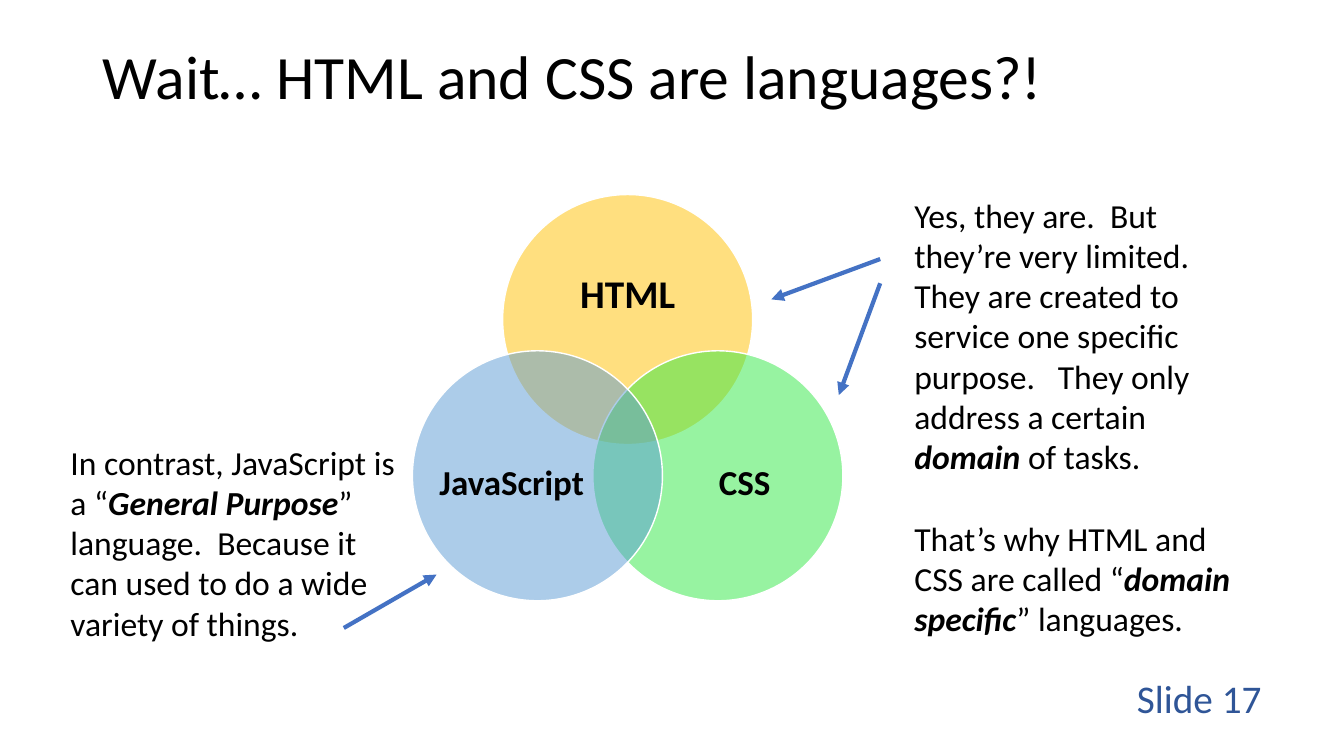
from collections import namedtuple
from dataclasses import dataclass

from lxml import etree
from pptx import Presentation
from pptx import util as u
from pptx.dml.color import RGBColor
from pptx.enum import shapes, text
from pptx.oxml import ns

Box = namedtuple("Box", "left top width height")


@dataclass(frozen=True)
class Theme:
    """Colours, font and type sizes of the slide."""
    font: str = "Calibri"
    ink: str = "000000"
    paper: str = "FFFFFF"
    html: str = "FFC000"
    css: str = "30E845"
    javascript: str = "5B9BD5"
    arrow: str = "4472C4"
    number: str = "2F5597"
    title_size: int = 44
    html_size: int = 28
    label_size: int = 25
    note_size: int = 24
    number_size: int = 28


THEME = Theme()


def place(item, box):
    """Move an item to a box given in inches."""
    item.left, item.top, item.width, item.height = map(u.Inches, box)


def style(span, size, color=THEME.ink, bold=False, italic=False):
    """Format one run of text."""
    font = span.font
    font.name, font.size = THEME.font, u.Pt(size)
    font.bold, font.italic = bold, italic
    font.color.rgb = RGBColor.from_string(color)


def add_line_of_text(page, box, words, size, align, color=THEME.ink, bold=False, inset=0.0):
    """Add a one-line text box, centred vertically."""
    frame = page.shapes.add_textbox(*map(u.Inches, box)).text_frame
    frame.word_wrap = True
    frame.vertical_anchor = text.MSO_ANCHOR.MIDDLE
    frame.margin_left = frame.margin_right = u.Inches(inset)
    frame.margin_top = frame.margin_bottom = u.Inches(inset / 2)
    para = frame.paragraphs[0]
    para.text, para.alignment = words, align
    style(para.runs[0], size, color, bold)
    return para


def add_title(page, box, words):
    """Fill and place the title placeholder."""
    title = page.shapes.title
    place(title, box)
    frame = title.text_frame
    frame.text = words
    frame.word_wrap = True
    frame.auto_size = text.MSO_AUTO_SIZE.NONE
    frame.vertical_anchor = text.MSO_ANCHOR.MIDDLE
    para = frame.paragraphs[0]
    para.alignment, para.line_spacing = text.PP_ALIGN.LEFT, 0.9
    style(para.runs[0], THEME.title_size)


def add_circle(page, box, color):
    """Add a half-transparent circle with a white outline."""
    circle = page.shapes.add_shape(shapes.MSO_SHAPE.OVAL, *map(u.Inches, box))
    circle.shadow.inherit = False
    circle.fill.solid()
    circle.fill.fore_color.rgb = RGBColor.from_string(color)
    tint = circle.fill._xPr.find(".//" + ns.qn("a:srgbClr"))
    etree.SubElement(tint, ns.qn("a:alpha"), val="50000")
    circle.line.color.rgb = RGBColor.from_string(THEME.paper)
    circle.line.width = u.Pt(1)


def add_venn(page, box):
    """Draw three overlapping circles, one above two, with their labels."""
    size = 2.48
    across, down = box.width - size, box.height - size
    wide, narrow = (1.82, 1.12), (1.49, 1.36)
    sets = [
        ("HTML", THEME.html, THEME.html_size, across / 2, 0, 0.33, 0.44, wide),
        ("CSS", THEME.css, THEME.label_size, across, down, 0.76, 0.64, narrow),
        ("JavaScript", THEME.javascript, THEME.label_size, 0, down, 0.24, 0.64, narrow),
    ]
    for name, color, points, dx, dy, label_x, label_y, label_size in sets:
        left, top = box.left + dx, box.top + dy
        add_circle(page, Box(left, top, size, size), color)
        label = Box(left + label_x, top + label_y, *label_size)
        para = add_line_of_text(page, label, name, points, text.PP_ALIGN.CENTER, bold=True)
        para.line_spacing = 0.9


def add_note(page, box, paragraphs):
    """Add a note whose paragraphs are lists of (words, emphasis) pairs."""
    frame = page.shapes.add_textbox(*map(u.Inches, box)).text_frame
    frame.word_wrap = True
    frame.auto_size = text.MSO_AUTO_SIZE.SHAPE_TO_FIT_TEXT
    for index, spans in enumerate(paragraphs):
        para = frame.add_paragraph() if index else frame.paragraphs[0]
        para.space_before = u.Pt(29.3 if index else 0)
        for words, emphasis in spans:
            span = para.add_run()
            span.text = words
            style(span, THEME.note_size, bold=emphasis, italic=emphasis)


def add_arrow(page, start, end):
    """Add an arrow from start to end."""
    arrow = page.shapes.add_connector(
        shapes.MSO_CONNECTOR.STRAIGHT, *map(u.Inches, start + end))
    arrow.line.color.rgb = RGBColor.from_string(THEME.arrow)
    arrow.line.width = u.Pt(3)
    etree.SubElement(arrow.line._get_or_add_ln(), ns.qn("a:tailEnd"), type="triangle")
    etree.SubElement(arrow._element.spPr, ns.qn("a:effectLst"))


def add_arrows(page, box):
    """Point from the notes to the circles inside the box."""
    routes = [
        ((4.64, 0.88), (4.23, 1.99)),
        ((-0.68, 4.3), (0.24, 3.77)),
        ((4.64, 0.64), (3.56, 1.04)),
    ]
    for route in routes:
        start, end = ((box.left + x, box.top + y) for x, y in route)
        add_arrow(page, start, end)


def build_languages_slide(deck):
    """Build the slide on HTML, CSS and JavaScript as languages."""
    page = deck.slides.add_slide(deck.slide_layouts[5])
    venn = Box(4.09, 1.93, 4.27, 4.03)
    add_title(page, Box(0.92, 0.4, 11.5, 0.78), "Wait… HTML and CSS are languages?!")
    add_venn(page, venn)
    add_line_of_text(page, Box(9.61, 6.72, 3, 0.4), "Slide 17", THEME.number_size,
                     text.PP_ALIGN.RIGHT, THEME.number, inset=0.1)
    add_note(page, Box(8.97, 1.88, 3.48, 4.54), [
        [("Yes, they are.  But they’re very limited.  They are created to service "
          "one specific purpose.   They only address a certain ", False),
         ("domain", True), (" of tasks.", False)],
        [("That’s why HTML and CSS are called “", False),
         ("domain specific", True), ("” languages.", False)],
    ])
    add_note(page, Box(0.6, 4.33, 3.44, 2.12), [
        [("In contrast, JavaScript is a “", False), ("General Purpose", True),
         ("” language.  Because it can used to do a wide variety of things.", False)],
    ])
    add_arrows(page, venn)


def main():
    """Create and save the deck."""
    deck = Presentation()
    deck.slide_width, deck.slide_height = u.Inches(13.33), u.Inches(7.5)
    build_languages_slide(deck)
    deck.save("out.pptx")


if __name__ == "__main__":
    main()
